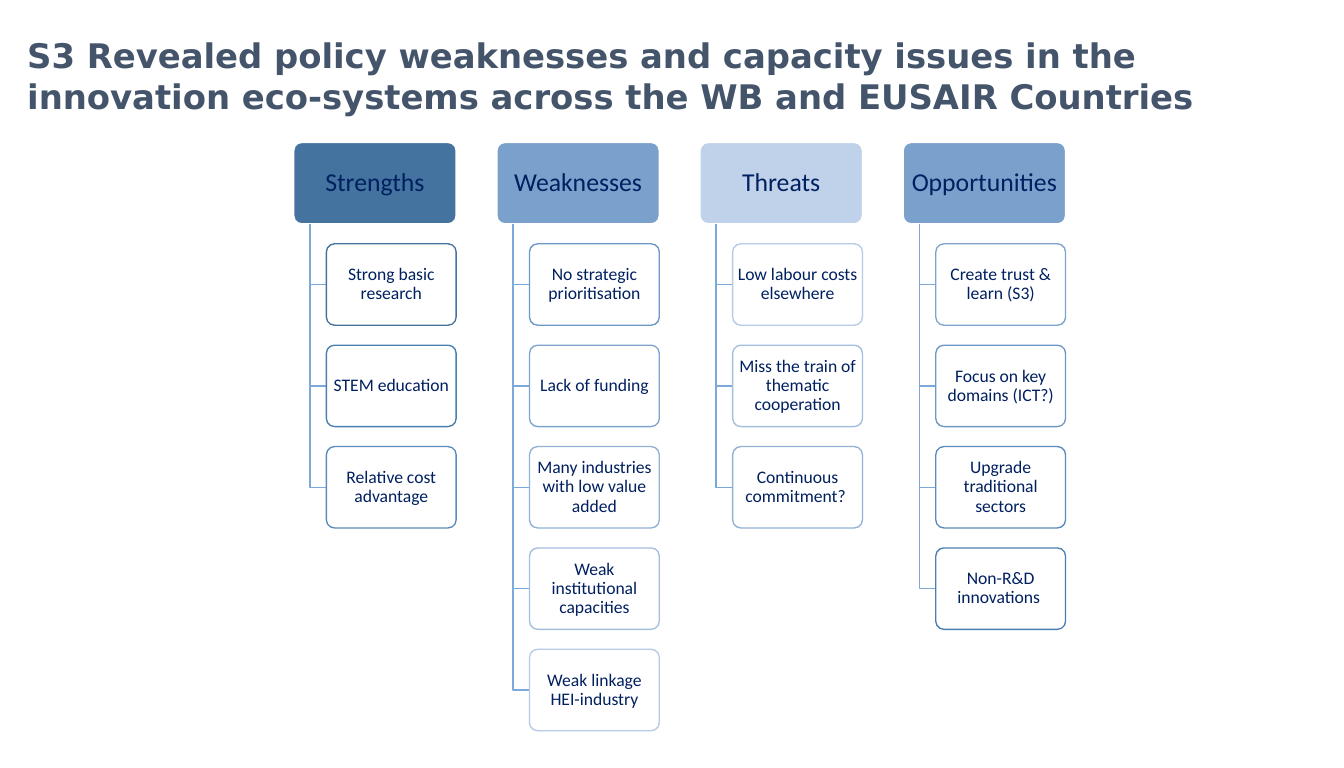
from dataclasses import dataclass
from itertools import chain

from pptx import Presentation
from pptx.dml.color import RGBColor
from pptx.enum.shapes import MSO_SHAPE
from pptx.enum.text import MSO_ANCHOR, MSO_AUTO_SIZE, PP_ALIGN
from pptx.util import Cm, Pt


@dataclass(frozen=True)
class Theme:
    heading_font: str = "DejaVu Sans"
    body_font: str = "Calibri"
    heading_size: int = 25
    category_size: int = 19
    item_size: int = 13
    heading_color: str = "44546A"
    text_color: str = "002060"
    white: str = "FFFFFF"
    branch_color: str = "7AA9DA"
    strong_fill: str = "43739E"
    medium_fill: str = "7AA1CC"
    light_fill: str = "C0D2EA"
    # Item outlines, dark to light
    ramp: tuple = ("43739E", "4A7FB2", "5A8BBC", "6C98C5",
                   "7EA4CE", "91B1D6", "A4BEDE", "B7CBE6")


THEME = Theme()

# Category, fill, items
SWOT = [
    ("Strengths", THEME.strong_fill,
     ["Strong basic research", "STEM education", "Relative cost advantage"]),
    ("Weaknesses", THEME.medium_fill,
     ["No strategic prioritisation", "Lack of funding",
      "Many industries with low value added",
      "Weak institutional capacities", "Weak linkage HEI-industry"]),
    ("Threats", THEME.light_fill,
     ["Low labour costs elsewhere", "Miss the train of thematic cooperation",
      "Continuous commitment? "]),
    ("Opportunities", THEME.medium_fill,
     ["Create trust & learn (S3)", "Focus on key domains (ICT?)",
      "Upgrade traditional sectors", "Non-R&D innovations "]),
]

# Grid in centimetres
LEFT, TOP = 7.65, 3.71
COLUMN_PITCH, ROW_PITCH = 5.29, 2.64
CATEGORY_WIDTH, ITEM_WIDTH, BOX_HEIGHT = 4.23, 3.38, 2.12
BRANCH_INDENT, ITEM_INDENT = 0.42, 0.85


def apply(target, values):
    for name, value in values.items():
        setattr(target, name, value)


class SwotSlide:
    def __init__(self, slide, theme):
        self.shapes = slide.shapes
        self.theme = theme

    def label(self, frame, text, font, size, color, bold=False, **layout):
        paragraph = frame.paragraphs[0]
        paragraph.text = text
        apply(paragraph, layout)
        run_font = paragraph.runs[0].font
        apply(run_font, {"name": font, "size": Pt(size), "bold": bold})
        run_font.color.rgb = RGBColor.from_string(color)

    def outline(self, shape, color):
        shape.shadow.inherit = False
        shape.line.color.rgb = RGBColor.from_string(color)
        shape.line.width = Pt(1)

    def heading(self, text, left, top, width, height):
        frame = self.shapes.add_textbox(
            Cm(left), Cm(top), Cm(width), Cm(height)).text_frame
        apply(frame, {"word_wrap": True,
                      "auto_size": MSO_AUTO_SIZE.SHAPE_TO_FIT_TEXT,
                      "margin_left": Cm(0.3), "margin_right": Cm(0.3),
                      "margin_top": Cm(0.15), "margin_bottom": Cm(0.15)})
        self.label(frame, text, self.theme.heading_font,
                   self.theme.heading_size, self.theme.heading_color, bold=True)

    def box(self, text, left, top, width, size, fill, line, margin):
        shape = self.shapes.add_shape(
            MSO_SHAPE.ROUNDED_RECTANGLE,
            Cm(left), Cm(top), Cm(width), Cm(BOX_HEIGHT))
        shape.adjustments[0] = 0.1
        shape.fill.solid()
        shape.fill.fore_color.rgb = RGBColor.from_string(fill)
        self.outline(shape, line)
        apply(shape.text_frame, {
            "word_wrap": True, "vertical_anchor": MSO_ANCHOR.MIDDLE,
            "margin_left": Cm(margin), "margin_right": Cm(margin),
            "margin_top": Cm(0.05), "margin_bottom": Cm(0.05)})
        self.label(shape.text_frame, text, self.theme.body_font, size,
                   self.theme.text_color,
                   alignment=PP_ALIGN.CENTER, line_spacing=0.9)

    def branch(self, left, top, right, bottom):
        builder = self.shapes.build_freeform(Cm(left), Cm(top))
        builder.add_line_segments(
            [(Cm(left), Cm(bottom)), (Cm(right), Cm(bottom))], close=False)
        elbow = builder.convert_to_shape()
        elbow.fill.background()
        self.outline(elbow, self.theme.branch_color)


def main():
    deck = Presentation()
    apply(deck, {"slide_width": Cm(35), "slide_height": Cm(20)})
    swot = SwotSlide(deck.slides.add_slide(deck.slide_layouts[6]), THEME)

    # Category columns with their items
    outlines = chain(THEME.ramp, reversed(THEME.ramp))
    for column, (category, fill, items) in enumerate(SWOT):
        left = LEFT + column * COLUMN_PITCH
        swot.box(category, left, TOP, CATEGORY_WIDTH, THEME.category_size,
                 fill, THEME.white, margin=0.1)
        for row, item in enumerate(items, start=1):
            item_left, item_top = left + ITEM_INDENT, TOP + row * ROW_PITCH
            swot.branch(left + BRANCH_INDENT, TOP + BOX_HEIGHT,
                        item_left, item_top + BOX_HEIGHT / 2)
            swot.box(item, item_left, item_top, ITEM_WIDTH, THEME.item_size,
                     THEME.white, next(outlines), margin=0.06)

    # Heading
    swot.heading("S3 Revealed policy weaknesses and capacity issues in the "
                 "innovation eco-systems across the WB and EUSAIR Countries",
                 0.41, 0.76, 34.59, 2.46)

    deck.save("out.pptx")


if __name__ == "__main__":
    main()
